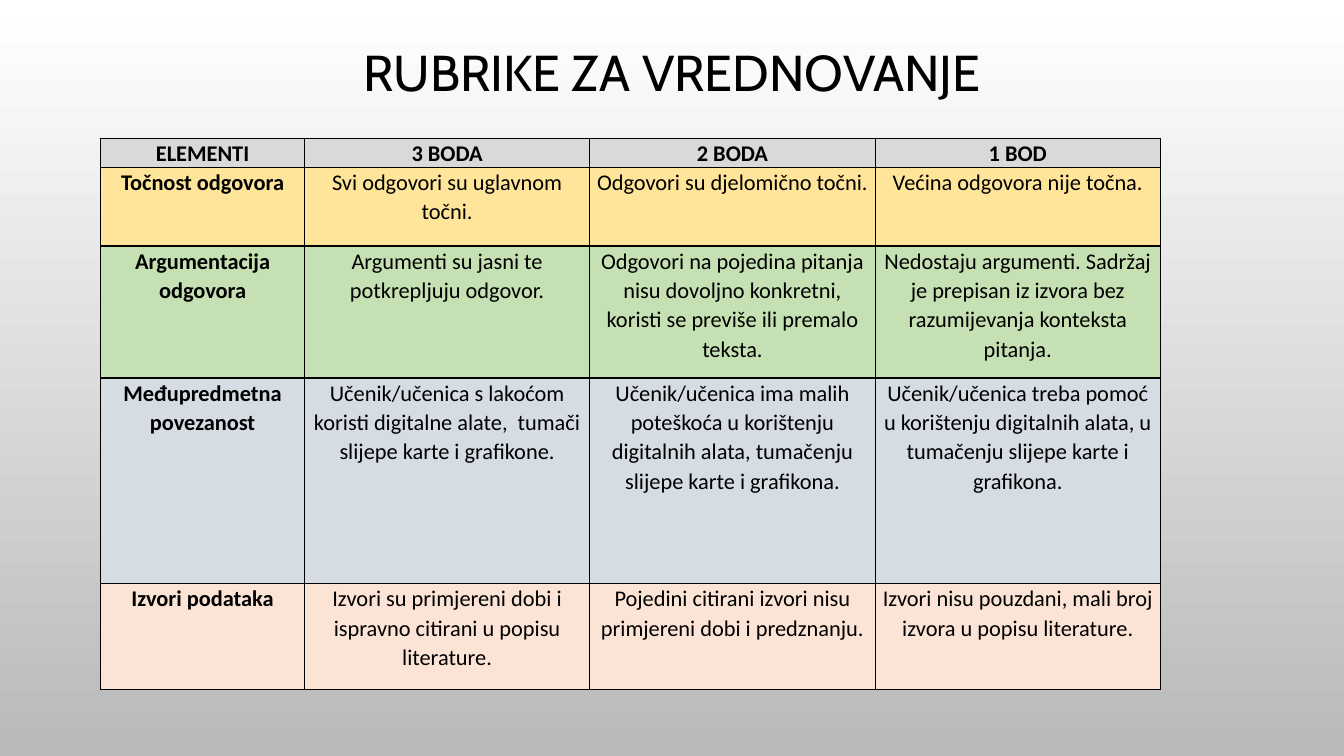
from pptx import Presentation
from pptx.dml.color import RGBColor
from pptx.enum.text import MSO_ANCHOR, MSO_AUTO_SIZE, PP_ALIGN
from pptx.oxml import parse_xml
from pptx.oxml.ns import nsdecls
from pptx.util import Inches, Pt

BLACK = RGBColor(0x00, 0x00, 0x00)
WHITE = RGBColor(0xFF, 0xFF, 0xFF)
SILVER = RGBColor(0xB9, 0xB9, 0xB9)
GRAY = RGBColor(0xD9, 0xD9, 0xD9)
YELLOW = RGBColor(0xFF, 0xE5, 0x99)
GREEN = RGBColor(0xC5, 0xE0, 0xB3)
BLUE = RGBColor(0xD5, 0xDC, 0xE4)
PEACH = RGBColor(0xFB, 0xE4, 0xD5)

COLUMN_WIDTHS = [2.02, 2.83, 2.83, 2.83]

# Each rubric row: height in inches, fill colour, cell texts
RUBRIC = [
    (0.29, GRAY, ["ELEMENTI", "3 BODA", "2 BODA", "1 BOD"]),
    (0.78, YELLOW, [
        "Točnost odgovora",
        "Svi odgovori su uglavnom točni.",
        "Odgovori su djelomično točni.",
        "Većina odgovora nije točna.",
    ]),
    (1.31, GREEN, [
        "Argumentacija odgovora",
        "Argumenti su jasni te potkrepljuju odgovor.",
        "Odgovori na pojedina pitanja nisu dovoljno konkretni, "
        "koristi se previše ili premalo teksta.",
        "Nedostaju argumenti. Sadržaj je prepisan iz izvora bez "
        "razumijevanja konteksta pitanja.",
    ]),
    (2.04, BLUE, [
        "Međupredmetna povezanost",
        "Učenik/učenica s lakoćom koristi digitalne alate,  tumači "
        "slijepe karte i grafikone.",
        "Učenik/učenica ima malih poteškoća u korištenju digitalnih "
        "alata, tumačenju slijepe karte i grafikona.",
        "Učenik/učenica treba pomoć u korištenju digitalnih alata, u "
        "tumačenju slijepe karte i grafikona.",
    ]),
    (1.05, PEACH, [
        "Izvori podataka",
        "Izvori su primjereni dobi i ispravno citirani u popisu literature.",
        "Pojedini citirani izvori nisu primjereni dobi i predznanju.",
        "Izvori nisu pouzdani, mali broj izvora u popisu literature.",
    ]),
]


def set_background(slide):
    fill = slide.background.fill
    fill.gradient()
    fill.gradient_angle = 270
    for stop, color in zip(fill.gradient_stops, (WHITE, SILVER)):
        stop.color.rgb = color


def format_paragraph(paragraph, font_name, size, spacing, bold=False):
    paragraph.alignment = PP_ALIGN.CENTER
    paragraph.line_spacing = spacing
    for run in paragraph.runs:
        run.font.name = font_name
        run.font.size = Pt(size)
        run.font.bold = bold
        run.font.color.rgb = BLACK


def set_title(slide, text):
    title = slide.shapes.title
    title.left, title.top = Inches(1), Inches(0.12)
    title.width, title.height = Inches(11.33), Inches(1.25)
    frame = title.text_frame
    frame.text = text
    frame.auto_size = MSO_AUTO_SIZE.NONE
    frame.vertical_anchor = MSO_ANCHOR.MIDDLE
    format_paragraph(frame.paragraphs[0], "Cabin", 36, 0.9)


def add_borders(cell):
    properties = cell._tc.get_or_add_tcPr()
    for side in ("lnL", "lnR", "lnT", "lnB"):
        properties.append(parse_xml(
            f'<a:{side} {nsdecls("a")} w="{Pt(1)}"><a:solidFill>'
            f'<a:srgbClr val="{BLACK}"/></a:solidFill></a:{side}>'))


def fill_cell(cell, text, color, bold):
    cell.margin_left = cell.margin_right = Inches(0.07)
    cell.margin_top = cell.margin_bottom = 0
    add_borders(cell)
    cell.fill.solid()
    cell.fill.fore_color.rgb = color
    cell.text_frame.text = text
    format_paragraph(cell.text_frame.paragraphs[0], "Calibri", 16, 1.07, bold)


def add_rubric(slide):
    table = slide.shapes.add_table(
        len(RUBRIC), len(COLUMN_WIDTHS), Inches(1), Inches(1.37),
        Inches(sum(COLUMN_WIDTHS)),
        Inches(sum(height for height, _, _ in RUBRIC))).table
    table.first_row = table.horz_banding = False
    for column, width in zip(table.columns, COLUMN_WIDTHS):
        column.width = Inches(width)
    for r, (height, color, texts) in enumerate(RUBRIC):
        table.rows[r].height = Inches(height)
        for c, text in enumerate(texts):
            # Header row and criterion column are bold
            fill_cell(table.cell(r, c), text, color, bold=r == 0 or c == 0)


def main():
    presentation = Presentation()
    presentation.slide_width = Inches(13.33)
    presentation.slide_height = Inches(7.5)
    slide = presentation.slides.add_slide(presentation.slide_layouts[5])
    set_background(slide)
    set_title(slide, "RUBRIKE ZA VREDNOVANJE")
    add_rubric(slide)
    presentation.save("out.pptx")


if __name__ == "__main__":
    main()
